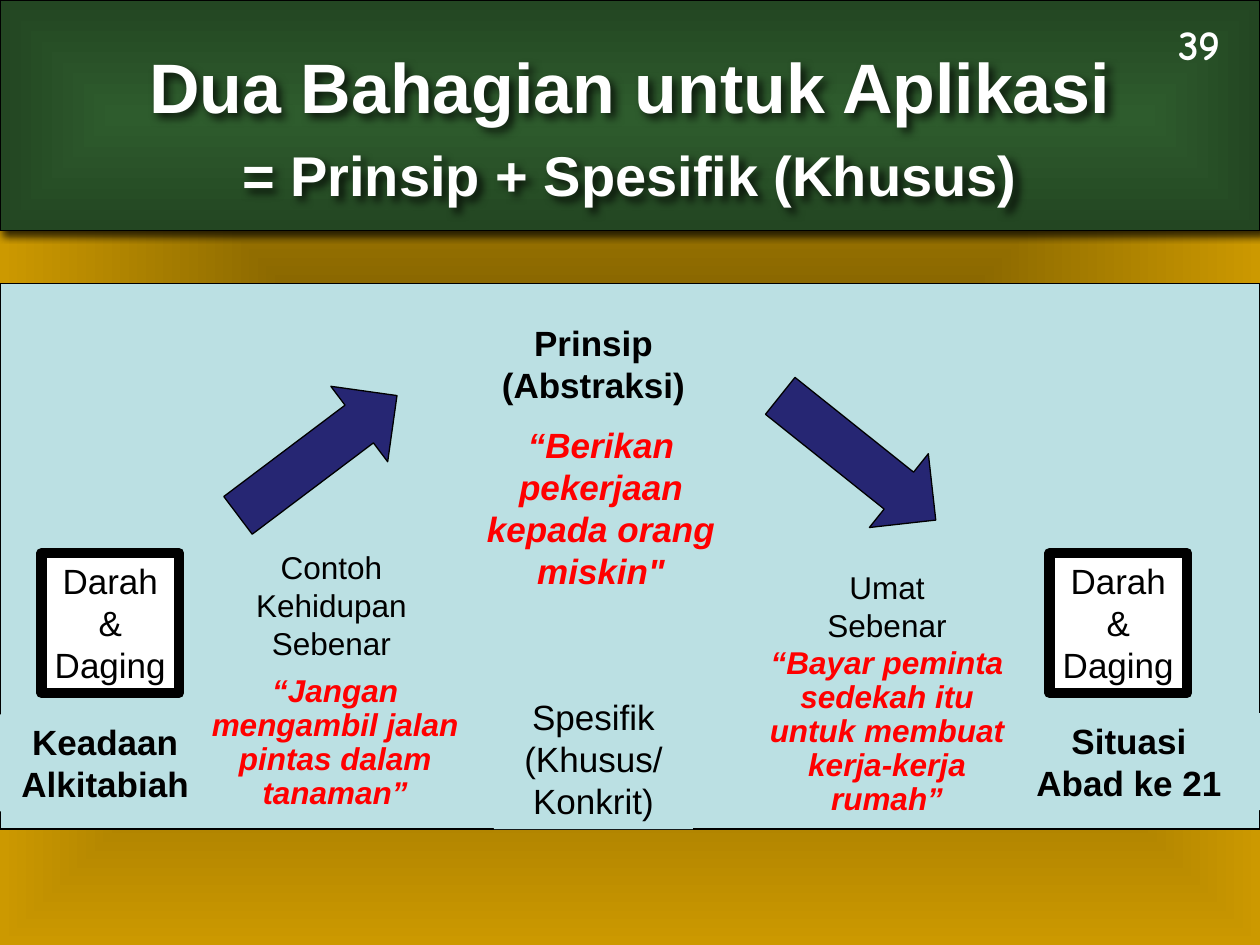
from dataclasses import dataclass

import lxml.etree
import pptx
import pptx.dml.color
import pptx.enum.shapes
import pptx.enum.text
import pptx.oxml
import pptx.oxml.ns
import pptx.util
from pptx.util import Inches

RGBColor = pptx.dml.color.RGBColor
Shape = pptx.enum.shapes.MSO_SHAPE
qn = pptx.oxml.ns.qn

BLACK = RGBColor(0x00, 0x00, 0x00)
WHITE = RGBColor(0xFF, 0xFF, 0xFF)
RED = RGBColor(0xFF, 0x00, 0x00)
PALE_BLUE = RGBColor(0xBB, 0xE0, 0xE3)
NAVY = RGBColor(0x26, 0x26, 0x73)
DARK_GOLD = RGBColor(0x5E, 0x47, 0x00)
GOLD = RGBColor(0xCC, 0x99, 0x00)
GREEN = RGBColor(0x2E, 0x5C, 0x2D)
DARK_GREEN = RGBColor(0x23, 0x46, 0x22)

SHADOW = (
    '<a:effectLst xmlns:a="http://schemas.openxmlformats.org/drawingml/2006/main">'
    '<a:outerShdw blurRad="63500" dist="35560" dir="2700000" algn="tl" rotWithShape="0">'
    '<a:srgbClr val="000000"><a:alpha val="75000"/></a:srgbClr>'
    "</a:outerShdw></a:effectLst>"
)


@dataclass
class Area:
    left: float
    top: float
    width: float
    height: float

    def lengths(self):
        return [Inches(n) for n in (self.left, self.top, self.width, self.height)]


@dataclass
class Label:
    """Text on a plain box; newlines part paragraphs, vertical tabs break lines."""
    text: str
    area: Area
    size: int = 20
    bold: bool = False
    italic: bool = False
    color: RGBColor = BLACK
    fill: RGBColor | None = PALE_BLUE
    border: float = 0
    wrap: bool = True
    spacing: float | None = None
    font: str = "Arial"
    shadow: bool = False


def quote(text: str, area: Area, size: int = 18, spacing: float | None = 0.9) -> Label:
    return Label(text, area, size, bold=True, italic=True, color=RED, spacing=spacing)


def flesh_and_blood(left: float) -> Label:
    return Label("Darah\v&\vDaging", Area(left, 4.39, 1.09, 1.11),
                 fill=WHITE, border=6, wrap=False)


LABELS = [
    Label("39", Area(9.22, 0.1, 0.6, 0.5), 24, bold=True, color=WHITE,
          fill=None, wrap=False, font="Comic Neue"),
    Label("Situasi\nAbad ke 21", Area(7.92, 5.66, 2.08, 0.77), bold=True),
    Label("Spesifik\n(Khusus/\nKonkrit)", Area(3.92, 5.47, 1.58, 1.11)),
    Label("Contoh\nKehidupan\nSebenar", Area(1.84, 4.3, 1.58, 1.01), 18),
    Label("Umat\nSebenar", Area(6, 4.46, 2.08, 0.71), 18),
    Label("Prinsip\v(Abstraksi)", Area(3.67, 2.5, 2.08, 0.77), bold=True),
    flesh_and_blood(8.33),
    flesh_and_blood(0.33),
    quote("“Jangan mengambil jalan pintas dalam tanaman”", Area(1.54, 5.31, 2.24, 1.19)),
    quote("“Bayar peminta sedekah itu untuk membuat kerja-kerja rumah”",
          Area(6, 5.09, 2.08, 1.46)),
    quote('“Berikan pekerjaan kepada orang miskin"', Area(3.67, 3.31, 2.2, 1.45), 20, None),
    Label("= Prinsip + Spesifik (Khusus)", Area(0.75, 1.07, 8.5, 0.64), 32,
          bold=True, color=WHITE, fill=None, shadow=True),
    Label("Dua Bahagian untuk Aplikasi", Area(0.75, 0.3, 8.5, 0.77), 40,
          bold=True, color=WHITE, fill=None, shadow=True),
    Label("Keadaan Alkitabiah", Area(0, 5.67, 1.67, 0.77), bold=True),
]


def set_center_gradient(fill, element, inner: RGBColor, outer: RGBColor) -> None:
    """Fill with a gradient that runs from the middle out to the edges."""
    fill.gradient()
    for stop, position, color in zip(fill.gradient_stops, (0, 1), (inner, outer)):
        stop.position = position
        stop.color.rgb = color
    gradient = element.find(".//" + qn("a:gradFill"))
    gradient.remove(gradient.find(qn("a:lin")))
    path = lxml.etree.SubElement(gradient, qn("a:path"), {"path": "shape"})
    middle = {side: "50000" for side in "ltrb"}
    lxml.etree.SubElement(path, qn("a:fillToRect"), middle)


def add_shadow(shape) -> None:
    properties = shape.element.spPr
    for effects in properties.findall(qn("a:effectLst")):
        properties.remove(effects)
    properties.append(pptx.oxml.parse_xml(SHADOW))


def add_outlined(page, kind, area: Area, fill: RGBColor | None = None,
                 line_width: float = 0.75):
    shape = page.shapes.add_shape(kind, *area.lengths())
    shape.shadow.inherit = False
    if fill is not None:
        shape.fill.solid()
        shape.fill.fore_color.rgb = fill
    if line_width:
        shape.line.color.rgb = BLACK
        shape.line.width = pptx.util.Pt(line_width)
    else:
        shape.line.fill.background()
    return shape


def add_label(page, label: Label) -> None:
    if label.fill is None:
        box = page.shapes.add_textbox(*label.area.lengths())
    else:
        box = add_outlined(page, Shape.RECTANGLE, label.area, label.fill, label.border)
    if label.shadow:
        add_shadow(box)
    frame = box.text_frame
    frame.text = label.text
    frame.word_wrap = label.wrap
    frame.auto_size = pptx.enum.text.MSO_AUTO_SIZE.SHAPE_TO_FIT_TEXT
    frame.vertical_anchor = pptx.enum.text.MSO_ANCHOR.TOP
    for para in frame.paragraphs:
        para.alignment = pptx.enum.text.PP_ALIGN.CENTER
        para.line_spacing = label.spacing
        para.font.name = label.font
        para.font.size = pptx.util.Pt(label.size)
        para.font.bold = label.bold
        para.font.italic = label.italic
        para.font.color.rgb = label.color


def main() -> None:
    deck = pptx.Presentation()
    deck.slide_width, deck.slide_height = Inches(10), Inches(7.5)
    page = deck.slides.add_slide(deck.slide_layouts[6])
    set_center_gradient(page.background.fill, page.element, DARK_GOLD, GOLD)

    add_outlined(page, Shape.RECTANGLE, Area(0, 2.25, 10, 4.33), PALE_BLUE)
    header = add_outlined(page, Shape.RECTANGLE, Area(0, 0, 10, 1.83))
    set_center_gradient(header.fill, header.element, GREEN, DARK_GREEN)
    add_shadow(header)

    for label in LABELS:
        add_label(page, label)
    for left, top, angle in ((1.73, 3.24, 323), (6.02, 3.26, 38.6)):
        arrow = add_outlined(page, Shape.RIGHT_ARROW, Area(left, top, 1.58, 0.75), NAVY)
        arrow.rotation = angle

    deck.save("out.pptx")


if __name__ == "__main__":
    main()
